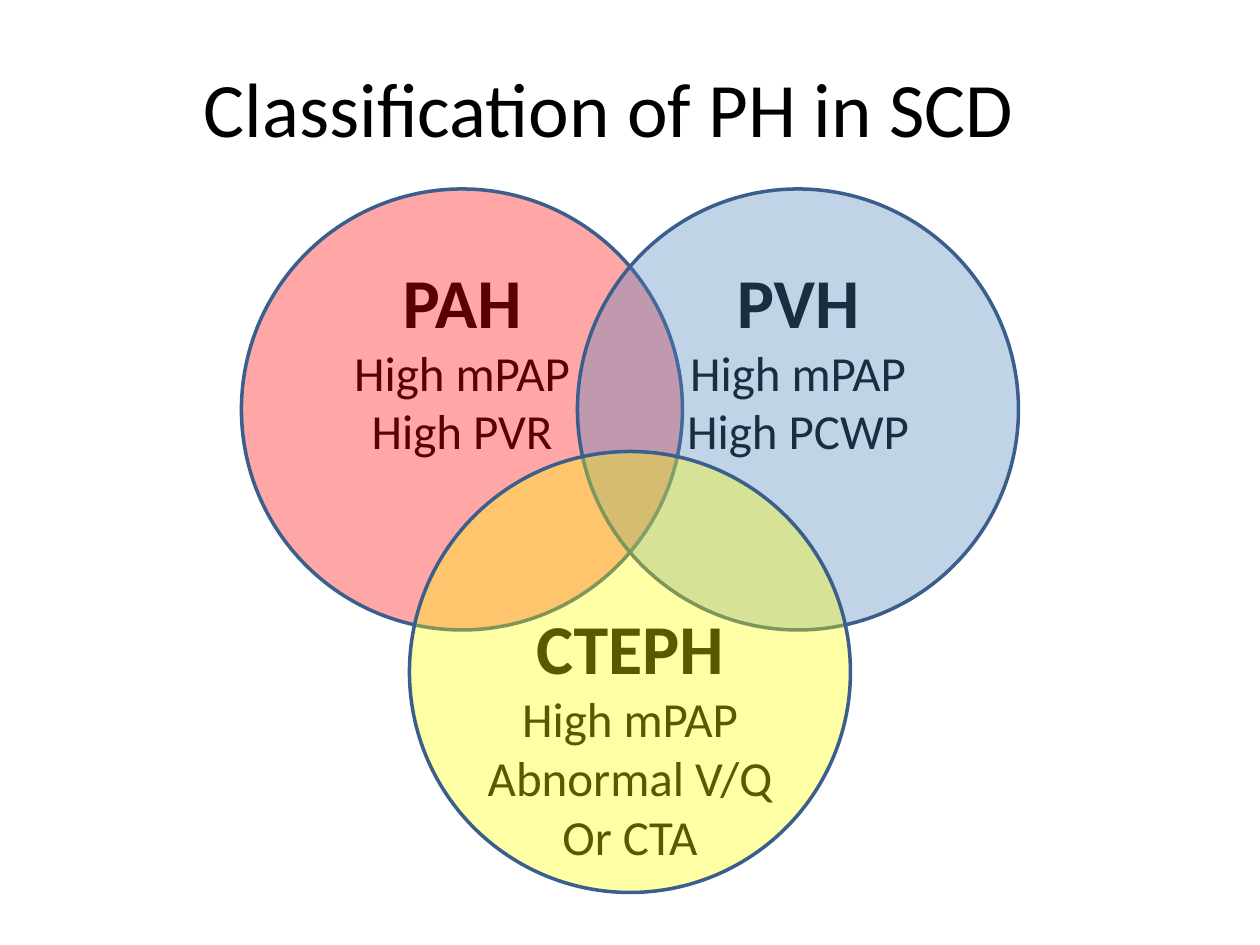
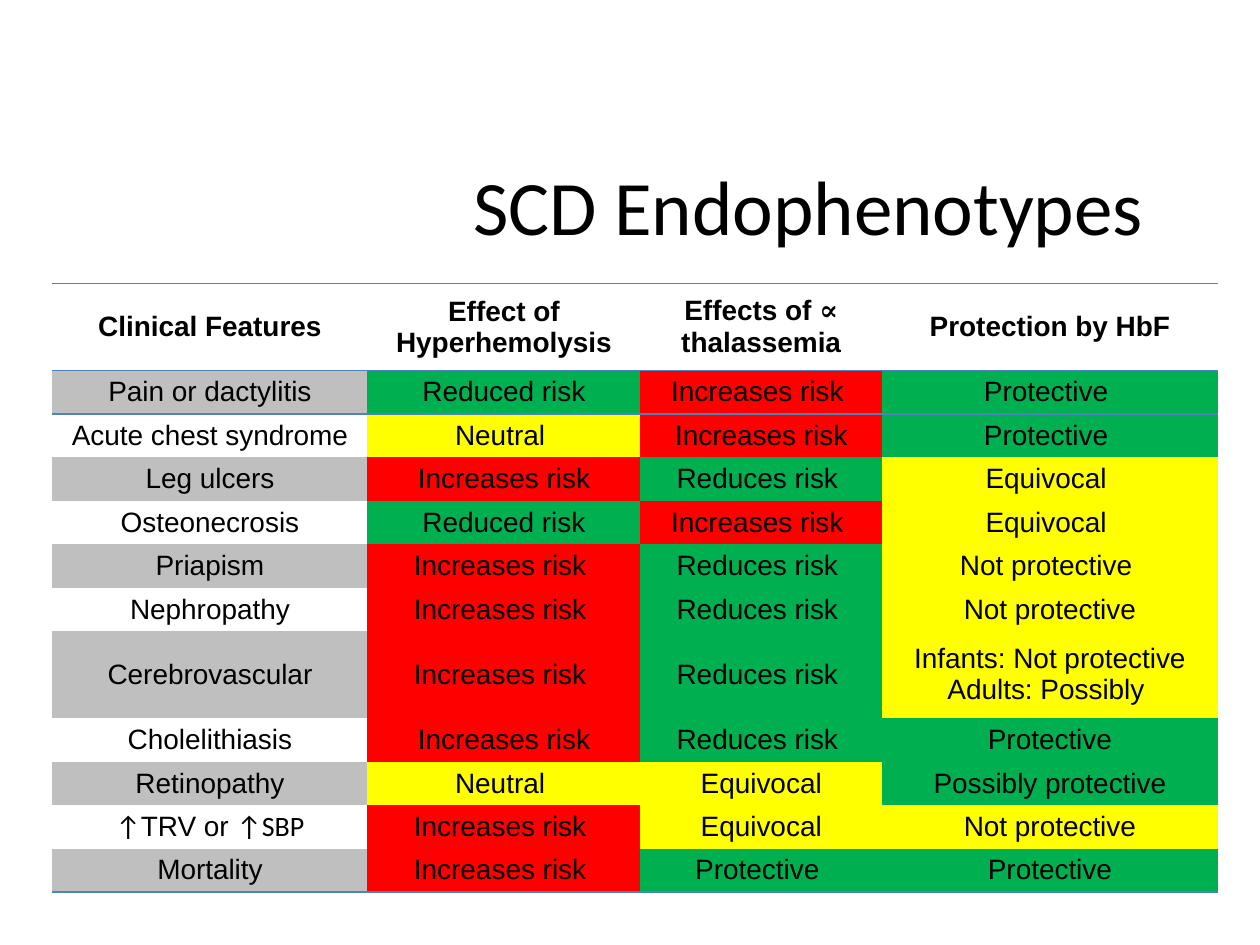
"""Build two slides on pulmonary hypertension classes and endophenotypes in SCD."""
from dataclasses import dataclass
from lxml import etree
from pptx import Presentation
from pptx.dml.color import RGBColor
from pptx.enum import shapes, text
from pptx.oxml import ns
from pptx.util import Pt


@dataclass(frozen=True)
class Theme:
    ink: str = "000000"
    outline: str = "3A5F8C"
    rule: str = "4F81BD"
    red: str = "FF0000"
    blue: str = "4F81BD"
    yellow: str = "FFFF00"
    green: str = "00B050"
    grey: str = "BFBFBF"
    heading_font: str = "Calibri"
    table_font: str = "Arial"
    symbol_font: str = "Cambria"
    title_size: int = 44
    class_size: int = 40
    criterion_size: int = 28
    cell_size: int = 16


THEME = Theme()
PLAIN_STYLE = "{2D5ABB26-0587-4C30-8999-92F81FD0307C}"

VENN_TITLE = ("Classification of PH in SCD", (36, 28, 624, 66))
DIAMETER = 252
VENN = [
    ("PAH", ["High mPAP", "High PVR"], THEME.red, (264, 234), 144, 140),
    ("PVH", ["High mPAP", "High PCWP"], THEME.blue, (456, 234), 144, 142),
    ("CTEPH", ["High mPAP", "Abnormal V/Q", "Or CTA"], THEME.yellow, (360, 384), 342, 180),
]

TABLE_TITLE = ("SCD Endophenotypes", (204, 72, 516, 90))
TABLE_ORIGIN = (30, 162)
COLUMN_WIDTHS = [180, 156, 138, 192]
TABLE_HEIGHT = 348
DOUBLE_ROWS = {0, 7}
ALPHA_HEADER = [("Effects of ", THEME.table_font), ("∝", THEME.symbol_font),
                (" thalassemia", THEME.table_font)]
PRESSURE_LABEL = [("↑", THEME.heading_font), ("TRV or ", THEME.table_font),
                  ("↑SBP", THEME.heading_font)]
FEATURES = [
    ("Clinical Features", "Effect of Hyperhemolysis", ALPHA_HEADER, "Protection by HbF"),
    ("Pain or dactylitis", "Reduced risk", "Increases risk ", "Protective "),
    ("Acute chest syndrome", "Neutral ", "Increases risk", "Protective "),
    ("Leg ulcers", "Increases risk", "Reduces risk ", "Equivocal "),
    ("Osteonecrosis", "Reduced risk", "Increases risk ", "Equivocal "),
    ("Priapism", "Increases risk ", "Reduces risk ", "Not protective "),
    ("Nephropathy", "Increases risk ", "Reduces risk ", "Not protective"),
    ("Cerebrovascular", "Increases risk ", "Reduces risk ",
     "Infants: Not protective Adults: Possibly "),
    ("Cholelithiasis", "Increases risk", "Reduces risk ", "Protective"),
    ("Retinopathy", "Neutral ", "Equivocal", "Possibly protective"),
    (PRESSURE_LABEL, "Increases risk ", "Equivocal", "Not protective"),
    ("Mortality", "Increases risk ", "Protective ", "Protective"),
]
EFFECT_COLOURS = {
    "Increases": THEME.red, "Reduces": THEME.green, "Reduced": THEME.green,
    "Protective": THEME.green, "Possibly": THEME.green,
}


def rgb(colour):
    return RGBColor.from_string(colour)


def add_run(paragraph, wording, font, size, bold=False):
    paragraph.alignment = text.PP_ALIGN.CENTER
    run = paragraph.add_run()
    run.text = wording
    run.font.name, run.font.size, run.font.bold = font, Pt(size), bold
    run.font.color.rgb = rgb(THEME.ink)


def add_titled_slide(deck, wording, place):
    slide = deck.slides.add_slide(deck.slide_layouts[5])
    title = slide.shapes.title
    title.left, title.top, title.width, title.height = map(Pt, place)
    title.text_frame.vertical_anchor = text.MSO_ANCHOR.MIDDLE
    add_run(title.text_frame.paragraphs[0], wording, THEME.heading_font, THEME.title_size)
    return slide


def add_caption(slide, name, criteria, centre_x, top, width):
    height = 7.2 + 1.22 * (THEME.class_size + THEME.criterion_size * len(criteria))
    caption = slide.shapes.add_textbox(Pt(centre_x - width / 2), Pt(top), Pt(width), Pt(height))
    frame = caption.text_frame
    frame.word_wrap = False
    frame.auto_size = text.MSO_AUTO_SIZE.SHAPE_TO_FIT_TEXT
    add_run(frame.paragraphs[0], name, THEME.heading_font, THEME.class_size, True)
    for criterion in criteria:
        add_run(frame.add_paragraph(), criterion, THEME.heading_font, THEME.criterion_size)


def add_circle(slide, centre, colour):
    left, top = (Pt(middle - DIAMETER / 2) for middle in centre)
    circle = slide.shapes.add_shape(shapes.MSO_SHAPE.OVAL, left, top, Pt(DIAMETER), Pt(DIAMETER))
    circle.shadow.inherit = False
    circle.fill.solid()
    circle.fill.fore_color.rgb = rgb(colour)
    tint = circle._element.spPr.find(ns.qn("a:solidFill"))[0]
    etree.SubElement(tint, ns.qn("a:alpha"), val="35000")
    circle.line.color.rgb = rgb(THEME.outline)
    circle.line.width = Pt(2)


def add_rule(cell, side):
    line = etree.SubElement(cell._tc.get_or_add_tcPr(), ns.qn(f"a:ln{side}"), w=str(Pt(1)))
    solid = etree.SubElement(line, ns.qn("a:solidFill"))
    etree.SubElement(solid, ns.qn("a:srgbClr"), val=THEME.rule)


def cell_colour(row, column, wording):
    if row == 0:
        return None
    if column == 0:
        return THEME.grey if row % 2 else None
    return EFFECT_COLOURS.get(wording.split()[0], THEME.yellow)


def fill_cell(cell, row, column, wording):
    cell.vertical_anchor = text.MSO_ANCHOR.MIDDLE
    cell.margin_left = cell.margin_right = Pt(5)
    cell.margin_top = cell.margin_bottom = 0
    if row in (0, 1):
        add_rule(cell, "T")
    if row in (0, len(FEATURES) - 1):
        add_rule(cell, "B")
    colour = cell_colour(row, column, wording)
    if colour:
        cell.fill.solid()
        cell.fill.fore_color.rgb = rgb(colour)
    else:
        cell.fill.background()
    pieces = [(wording, THEME.table_font)] if isinstance(wording, str) else wording
    for piece, font in pieces:
        add_run(cell.text_frame.paragraphs[0], piece, font, THEME.cell_size, row == 0)


def add_feature_table(slide):
    table = slide.shapes.add_table(
        len(FEATURES), len(COLUMN_WIDTHS), *map(Pt, TABLE_ORIGIN),
        Pt(sum(COLUMN_WIDTHS)), Pt(TABLE_HEIGHT)).table
    table._tbl.tblPr.find(ns.qn("a:tableStyleId")).text = PLAIN_STYLE
    table.horz_banding = False
    for column, width in zip(table.columns, COLUMN_WIDTHS):
        column.width = Pt(width)
    row_unit = TABLE_HEIGHT / (len(FEATURES) + len(DOUBLE_ROWS))
    for row, feature in enumerate(FEATURES):
        table.rows[row].height = Pt(row_unit * (2 if row in DOUBLE_ROWS else 1))
        for column, wording in enumerate(feature):
            fill_cell(table.cell(row, column), row, column, wording)


def main():
    deck = Presentation()
    deck.slide_width, deck.slide_height = Pt(720), Pt(540)
    venn_slide = add_titled_slide(deck, *VENN_TITLE)
    for name, criteria, colour, centre, caption_top, caption_width in VENN:
        add_caption(venn_slide, name, criteria, centre[0], caption_top, caption_width)
        add_circle(venn_slide, centre, colour)
    add_feature_table(add_titled_slide(deck, *TABLE_TITLE))
    deck.save("out.pptx")


if __name__ == "__main__":
    main()
